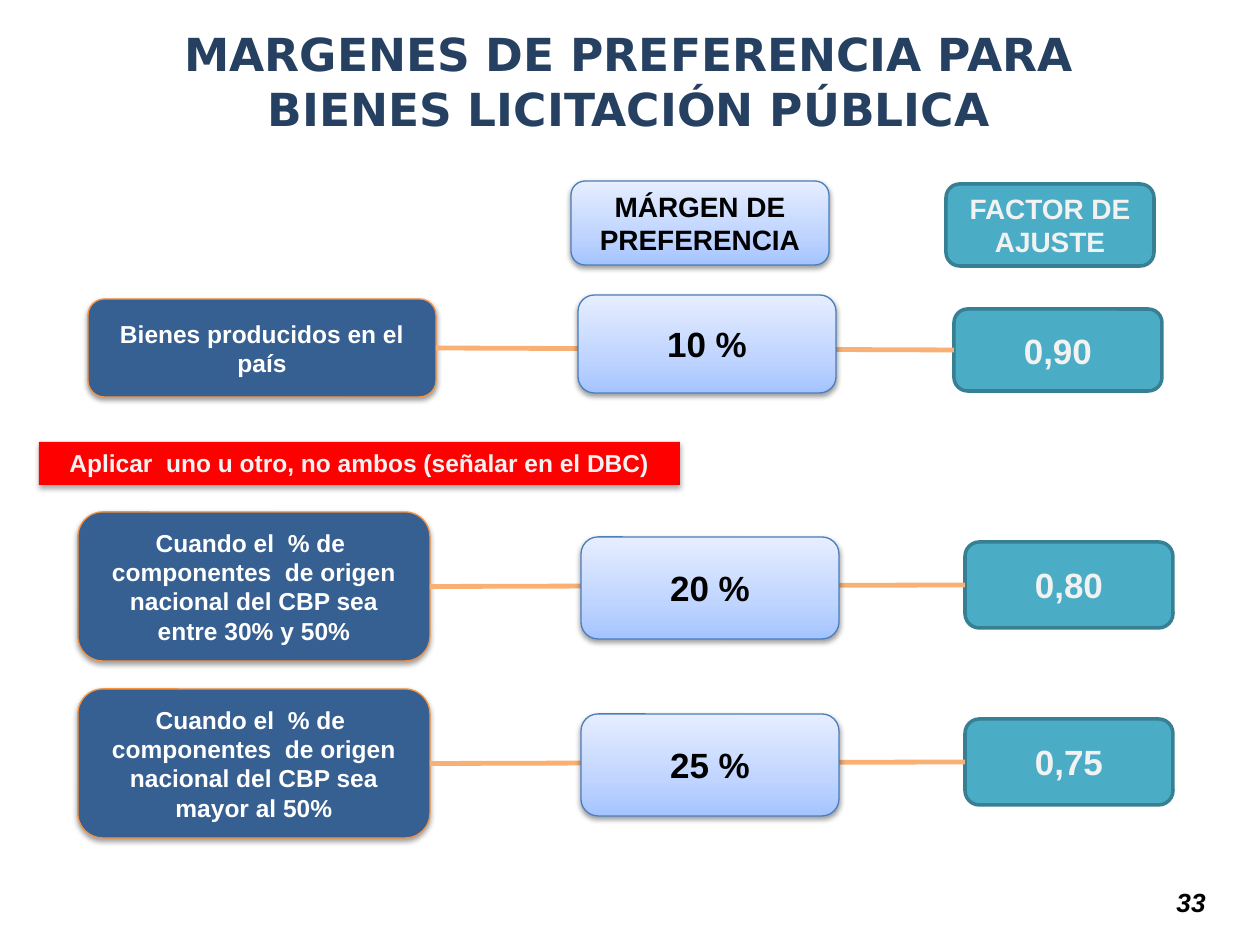
from copy import deepcopy
from dataclasses import dataclass

from lxml import etree
from pptx import Presentation
from pptx import util as u
from pptx.dml.color import RGBColor
from pptx.enum import shapes, text
from pptx.oxml.ns import qn

SCALE = u.Inches(1) / 126


@dataclass(frozen=True)
class Theme:
    """Colours, fonts and type sizes of the slide."""
    title: str = "254061"
    ink: str = "000000"
    white: str = "FFFFFF"
    pale: str = "F2F2F2"
    case_fill: str = "376092"
    case_line: str = "F69240"
    margin_line: str = "4B7EBC"
    margin_stops: tuple = ((0, "A4C4FF"), (0.35, "BFD4FF"), (1, "E6EEFF"))
    factor_fill: str = "4BACC6"
    factor_line: str = "377F92"
    link: str = "F9B074"
    alert: str = "FF0000"
    body_font: str = "Arial"
    title_font: str = "DejaVu Sans"
    title_size: int = 26
    value_size: int = 20
    header_size: int = 16
    number_size: int = 15
    case_size: int = 14


THEME = Theme()


@dataclass(frozen=True)
class RowLayout:
    """Boxes of one row as x, y, width, height within the row."""
    case: tuple
    margin: tuple
    factor: tuple


FIRST_ROW = RowLayout((0, 4, 348, 98), (490, 0, 258, 98), (866, 14, 208, 82))
CBP_ROW = RowLayout((0, 0, 352, 149), (503, 25, 258, 102), (887, 30, 208, 86))


def px(length):
    """Turn px into EMU."""
    return u.Emu(round(length * SCALE))


def inside(origin, part):
    """Shift a part's box by the origin of its region."""
    return (origin[0] + part[0], origin[1] + part[1], *part[2:])


def write(holder, words, *, size, color, font=THEME.body_font, italic=False,
          align=text.PP_ALIGN.CENTER, anchor=text.MSO_ANCHOR.MIDDLE):
    """Put one formatted bold paragraph into a shape."""
    frame = holder.text_frame
    frame.word_wrap = True
    frame.vertical_anchor = anchor
    paragraph = frame.paragraphs[0]
    paragraph.alignment = align
    run = paragraph.add_run()
    run.text = words
    run.font.name = font
    run.font.size = u.Pt(size)
    run.font.bold = True
    run.font.italic = italic
    run.font.color.rgb = RGBColor.from_string(color)


def add_panel(slide, box, fill=None, line=None, line_width=0.75, rounded=True):
    """Add a flat box with the given fill and outline."""
    kind = shapes.MSO_SHAPE.ROUNDED_RECTANGLE if rounded else shapes.MSO_SHAPE.RECTANGLE
    panel = slide.shapes.add_shape(kind, *map(px, box))
    panel.shadow.inherit = False
    if fill:
        panel.fill.solid()
        panel.fill.fore_color.rgb = RGBColor.from_string(fill)
    if line:
        panel.line.color.rgb = RGBColor.from_string(line)
        panel.line.width = u.Pt(line_width)
    else:
        panel.line.fill.background()
    return panel


def drop_shadow(panel, opacity=38, distance=1.6):
    """Give a panel a soft shadow straight below it."""
    effects = panel._element.spPr.find(qn("a:effectLst"))
    shadow = etree.SubElement(
        effects, qn("a:outerShdw"), blurRad=str(u.Pt(3.1)), dist=str(u.Pt(distance)),
        dir="5400000", rotWithShape="0")
    color = etree.SubElement(shadow, qn("a:srgbClr"), val=THEME.ink)
    etree.SubElement(color, qn("a:alpha"), val=str(opacity * 1000))


def add_case(slide, box, words):
    """Add the dark box that names a case."""
    case = add_panel(slide, box, THEME.case_fill, THEME.case_line)
    drop_shadow(case)
    write(case, words, size=THEME.case_size, color=THEME.white)
    return case


def add_margin(slide, box, words, size=THEME.value_size):
    """Add a shaded box of the preference margin column."""
    margin = add_panel(slide, box, line=THEME.margin_line)
    margin.fill.gradient()
    margin.fill.gradient_angle = 90
    stop_list = margin._element.spPr.find(".//" + qn("a:gsLst"))
    stop_list.insert(1, deepcopy(stop_list[0]))
    for stop, (position, color) in zip(margin.fill.gradient_stops, THEME.margin_stops):
        stop.position = position
        stop.color.rgb = RGBColor.from_string(color)
    drop_shadow(margin)
    write(margin, words, size=size, color=THEME.ink)


def add_factor(slide, box, words, size=THEME.value_size):
    """Add a teal box of the adjustment factor column."""
    factor = add_panel(slide, box, THEME.factor_fill, THEME.factor_line, 2)
    write(factor, words, size=size, color=THEME.pale)
    return factor


def add_link(slide, case, factor):
    """Join the right side of a case to the left side of its factor."""
    link = slide.shapes.add_connector(shapes.MSO_CONNECTOR.STRAIGHT, 0, 0, 0, 0)
    link.begin_connect(case, 3)
    link.end_connect(factor, 1)
    link.line.color.rgb = RGBColor.from_string(THEME.link)
    link.line.width = u.Pt(2.75)
    etree.SubElement(link._element.spPr, qn("a:effectLst"))


def add_row(slide, origin, layout, case_words, margin_words, factor_words):
    """Add a case with its margin and factor."""
    factor = add_factor(slide, inside(origin, layout.factor), factor_words)
    case = add_case(slide, inside(origin, layout.case), case_words)
    add_link(slide, case, factor)
    add_margin(slide, inside(origin, layout.margin), margin_words)


def add_headers(slide, origin):
    """Add the two column headers."""
    add_margin(slide, inside(origin, (0, 0, 258, 84)), "MÁRGEN DE PREFERENCIA",
               THEME.header_size)
    add_factor(slide, inside(origin, (375, 3, 208, 82)), "FACTOR DE AJUSTE",
               THEME.header_size)


def add_notice(slide, box):
    """Add the red notice between the cases."""
    notice = add_panel(slide, box, THEME.alert, rounded=False)
    drop_shadow(notice, opacity=35, distance=1.8)
    write(notice, "Aplicar  uno u otro, no ambos (señalar en el DBC)",
          size=THEME.case_size, color=THEME.pale, anchor=text.MSO_ANCHOR.TOP)
    notice.text_frame.auto_size = text.MSO_AUTO_SIZE.SHAPE_TO_FIT_TEXT


def add_title(slide, box):
    """Add the slide title."""
    title = slide.shapes.add_textbox(*map(px, box))
    write(title, "MARGENES DE PREFERENCIA PARA BIENES LICITACIÓN PÚBLICA",
          size=THEME.title_size, color=THEME.title, font=THEME.title_font,
          anchor=text.MSO_ANCHOR.TOP)


def add_page_number(slide, box):
    """Add the page number at the lower right."""
    number = slide.shapes.add_textbox(*map(px, box))
    write(number, "33", size=THEME.number_size, color=THEME.ink, italic=True,
          align=text.PP_ALIGN.RIGHT, anchor=text.MSO_ANCHOR.BOTTOM)


def main():
    """Build the slide and save it."""
    deck = Presentation()
    deck.slide_width, deck.slide_height = px(1260), px(945)
    slide = deck.slides.add_slide(deck.slide_layouts[6])
    add_title(slide, (78, 20, 1102, 87))
    add_headers(slide, (571, 181))
    add_row(slide, (88, 295), FIRST_ROW, "Bienes producidos en el país", "10 %", "0,90")
    add_notice(slide, (39, 442, 641, 43))
    cbp_cases = (("entre 30% y 50%", "20 %", "0,80"), ("mayor al 50%", "25 %", "0,75"))
    for index, (share, margin, factor) in enumerate(cbp_cases):
        words = f"Cuando el  % de  componentes  de origen nacional del CBP sea {share}"
        add_row(slide, (78, 512 + 177 * index), CBP_ROW, words, margin, factor)
    add_page_number(slide, (924, 861, 294, 63))
    deck.save("out.pptx")


if __name__ == "__main__":
    main()
